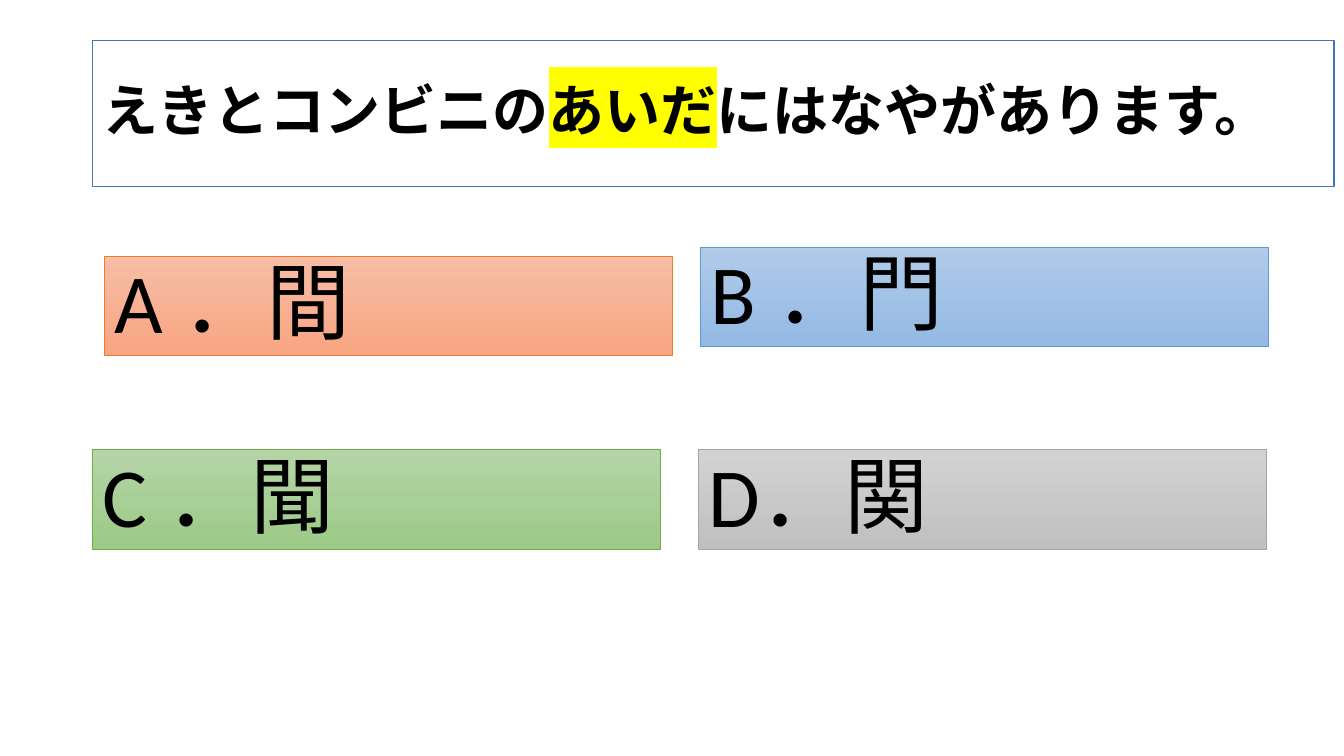
from lxml.etree import SubElement
from pptx import Presentation
from pptx.dml.color import RGBColor
from pptx.enum.shapes import MSO_SHAPE as Shape
from pptx.enum.text import MSO_ANCHOR as Anchor, MSO_AUTO_SIZE as AutoSize, PP_ALIGN as Align
from pptx.oxml.ns import qn
from pptx.util import Inches, Pt

QUESTION = [("えきとコンビニの", None), ("あいだ", "FFFF00"), ("にはなやがあります。", None)]
QUESTION_BOX = (0.92, 0.4, 12.31, 1.45)
QUESTION_FONT = {"size": Pt(40), "name": "Calibri", "bold": True}
OPTION_FONT = {"size": Pt(60), "name": "Calibri", "bold": False}
OPTION_SIZE = (5.63, 0.99)
OPTIONS = [
    ("A ．間", (1.04, 2.54), ("F7BDA5", "F8A582"), "ED7D31"),
    ("B ．門", (6.95, 2.45), ("B1CBE9", "93B9E4"), "5B9BD5"),
    ("C ．聞", (0.92, 4.46), ("B5D5A7", "9CC987"), "70AD47"),
    ("D．関", (6.93, 4.46), ("D2D2D2", "C0C0C0"), "A5A5A5"),
]


def color(value):
    """Return the colour for a hex string."""
    return RGBColor.from_string(value)


def set_values(target, values):
    """Set each named attribute of the target."""
    for name, value in values.items():
        setattr(target, name, value)


def set_line(shape, value, width):
    """Give the shape an outline."""
    shape.line.color.rgb = color(value)
    shape.line.width = Pt(width)


def add_run(paragraph, text, font, highlight=None):
    """Append black text, highlighted when a colour is given."""
    run = paragraph.add_run()
    run.text = text
    set_values(run.font, font)
    run.font.color.rgb = color("000000")
    if highlight:
        properties = run.font.fill._xPr
        mark = SubElement(properties, qn("a:highlight"))
        SubElement(mark, qn("a:srgbClr")).set("val", highlight)
        properties.find(qn("a:solidFill")).addnext(mark)


def prepare_text(shape, anchor, space_before):
    """Set up the text frame and return its first paragraph."""
    set_values(shape.text_frame, {
        "word_wrap": True, "auto_size": AutoSize.NONE, "vertical_anchor": anchor})
    paragraph = shape.text_frame.paragraphs[0]
    set_values(paragraph, {
        "alignment": Align.LEFT, "line_spacing": 0.9, "space_before": Pt(space_before)})
    return paragraph


def place_question(slide, box):
    """Format the title as the outlined question."""
    title = slide.shapes.title
    set_values(title, dict(zip(("left", "top", "width", "height"), map(Inches, box))))
    title.fill.solid()
    title.fill.fore_color.rgb = color("FFFFFF")
    set_line(title, "4472C4", 1)
    paragraph = prepare_text(title, Anchor.MIDDLE, 0)
    for text, highlight in QUESTION:
        add_run(paragraph, text, QUESTION_FONT, highlight)


def add_option(slide, box, text, gradient, outline):
    """Add one answer bar with a vertical gradient."""
    option = slide.shapes.add_shape(Shape.RECTANGLE, *map(Inches, box))
    option.shadow.inherit = False
    option.fill.gradient()
    option.fill.gradient_angle = 270
    for stop, value, position in zip(option.fill.gradient_stops, gradient, (0, 1)):
        stop.color.rgb = color(value)
        stop.position = position
    set_line(option, outline, 0.5)
    add_run(prepare_text(option, Anchor.TOP, 10), text, OPTION_FONT)


def main():
    """Build and save the quiz slide."""
    presentation = Presentation()
    set_values(presentation, {"slide_width": Inches(13.33), "slide_height": Inches(7.5)})
    slide = presentation.slides.add_slide(presentation.slide_layouts[5])
    place_question(slide, QUESTION_BOX)
    for text, corner, gradient, outline in OPTIONS:
        add_option(slide, corner + OPTION_SIZE, text, gradient, outline)
    presentation.save("out.pptx")


if __name__ == "__main__":
    main()
